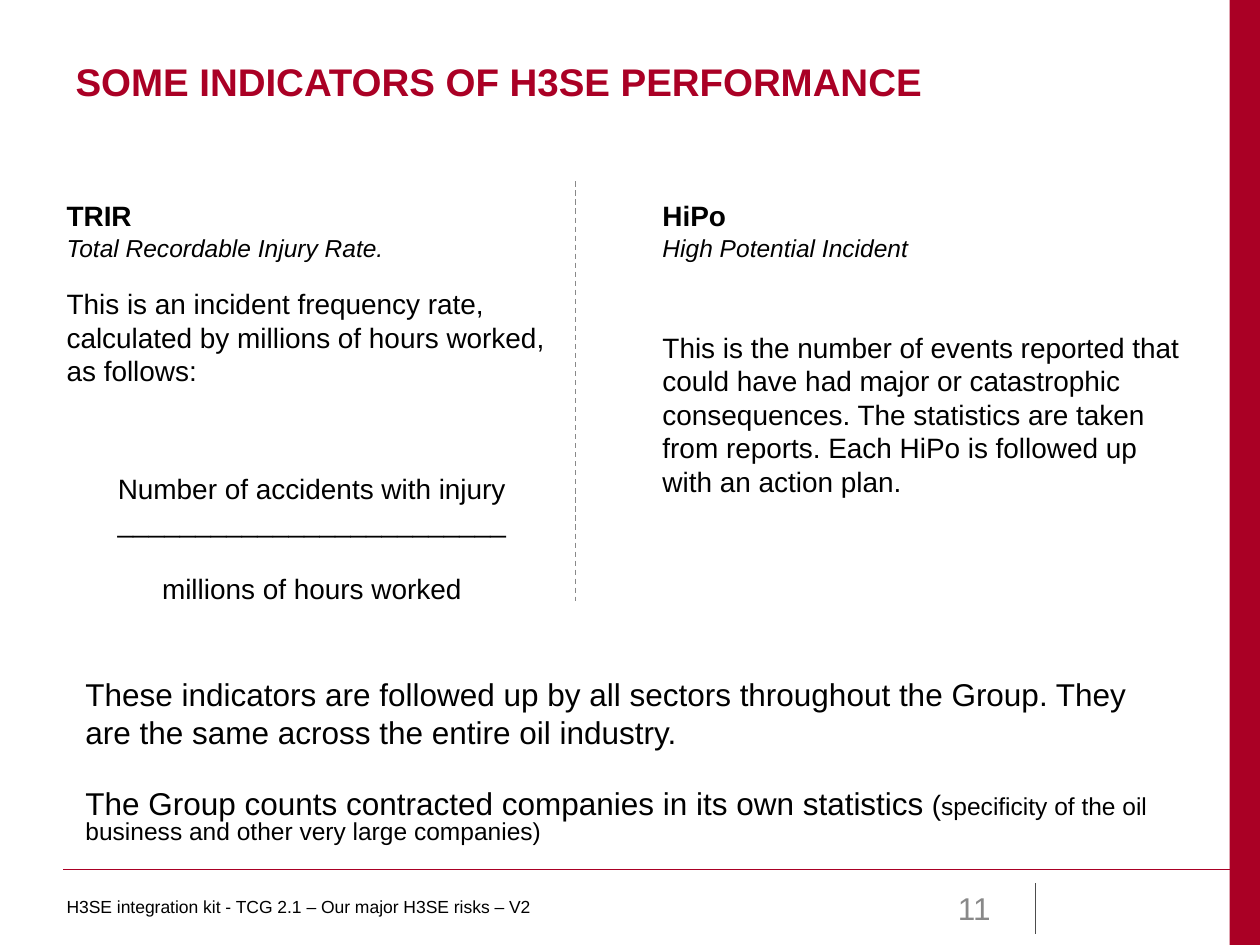
"""Build the slide on indicators of H3SE performance."""
from lxml import etree
from pptx import Presentation
from pptx.dml.color import RGBColor
from pptx.enum.dml import MSO_LINE
from pptx.enum.shapes import MSO_CONNECTOR, MSO_SHAPE
from pptx.enum.text import MSO_ANCHOR, PP_ALIGN
from pptx.oxml.ns import qn
from pptx.util import Inches, Pt

RED, BLACK, GRAY = "AA0025", "000000", "898989"


def color(value):
    return RGBColor.from_string(value)


def write(shape, lines, anchor=MSO_ANCHOR.TOP):
    """Fill a shape with (text, size, space before, style) lines."""
    frame = shape.text_frame
    frame.word_wrap = True
    frame.vertical_anchor = anchor
    for index, (text, size, before, style) in enumerate(lines):
        paragraph = frame.add_paragraph() if index else frame.paragraphs[0]
        paragraph.text = text
        paragraph.alignment = style.get("align", PP_ALIGN.LEFT)
        paragraph.space_before = Pt(before)
        font = paragraph.font
        font.name, font.size = "Arial", Pt(size)
        font.bold, font.italic = style.get("bold", False), style.get("italic", False)
        font.color.rgb = color(style.get("color", BLACK))


presentation = Presentation()
presentation.slide_width, presentation.slide_height = Inches(10), Inches(7.5)
slide = presentation.slides.add_slide(presentation.slide_layouts[5])
shapes = slide.shapes

bar = shapes.add_shape(MSO_SHAPE.RECTANGLE, Inches(9.76), 0, Inches(0.24), Inches(7.5))
bar.shadow.inherit = False
bar.fill.solid()
bar.fill.fore_color.rgb = color(RED)
bar.line.fill.background()

for x1, y1, x2, y2, line_color, width, dash in [
    (0.5, 6.9, 10, 6.9, RED, 0.75, MSO_LINE.SOLID),
    (8.22, 7.01, 8.22, 7.41, "4D4D4D", 0.5, MSO_LINE.SOLID),
    (4.57, 1.44, 4.57, 4.77, GRAY, 0.75, MSO_LINE.DASH),
]:
    connector = shapes.add_connector(
        MSO_CONNECTOR.STRAIGHT, Inches(x1), Inches(y1), Inches(x2), Inches(y2))
    connector.line.color.rgb = color(line_color)
    connector.line.width = Pt(width)
    connector.line.dash_style = dash
    etree.SubElement(connector._element.spPr, qn("a:effectLst"))

title = shapes.title
title.left, title.top, title.width, title.height = (
    Inches(0.5), Inches(0.3), Inches(8.99), Inches(0.69))
write(title, [("SOME INDICATORS OF H3SE PERFORMANCE", 22, 0, {"bold": True, "color": RED})],
      MSO_ANCHOR.MIDDLE)

bold, italic, centered = {"bold": True}, {"italic": True}, {"align": PP_ALIGN.CENTER}
trir = shapes.add_textbox(Inches(0.43), Inches(1.53), Inches(4.09), Inches(3.79))
write(trir, [
    ("TRIR", 16, 0, bold),
    ("Total Recordable Injury Rate.", 14, 0, italic),
    ("This is an incident frequency rate, calculated by millions of hours worked, "
     "as follows:", 16, 14, {}),
    ("Number of accidents with injury _________________________", 16, 48, centered),
    ("millions of hours worked", 16, 19, centered),
])

hipo = shapes.add_textbox(Inches(5.16), Inches(1.53), Inches(4.33), Inches(3.05))
write(hipo, [
    ("HiPo", 16, 0, bold),
    ("High Potential Incident", 14, 0, italic),
    ("This is the number of events reported that could have had major or catastrophic "
     "consequences. The statistics are taken from reports. Each HiPo is followed up "
     "with an action plan.", 16, 39, {}),
])

summary = shapes.add_textbox(Inches(0.58), Inches(5.31), Inches(8.82), Inches(1.79))
write(summary, [
    ("These indicators are followed up by all sectors throughout the Group. They are "
     "the same across the entire oil industry.", 18, 0, {}),
    ("The Group counts contracted companies in its own statistics", 18, 23, {}),
])
scope = summary.text_frame.paragraphs[1]
scope.line_spacing = 0.8
for text, size in [
    (" (", 16),
    ("specificity of the oil business and other very large companies)", 14),
]:
    run = scope.add_run()
    run.text = text
    run.font.size = Pt(size)

footer = shapes.add_textbox(Inches(0.43), Inches(7.06), Inches(7.26), Inches(0.4))
write(footer, [("H3SE integration kit - TCG 2.1 – Our major H3SE risks – V2", 10, 0, {})])

page_number = shapes.add_textbox(Inches(7.17), Inches(7.01), Inches(0.79), Inches(0.4))
write(page_number, [("11", 18, 0, {"align": PP_ALIGN.RIGHT, "color": GRAY})],
      MSO_ANCHOR.MIDDLE)

presentation.save("out.pptx")
